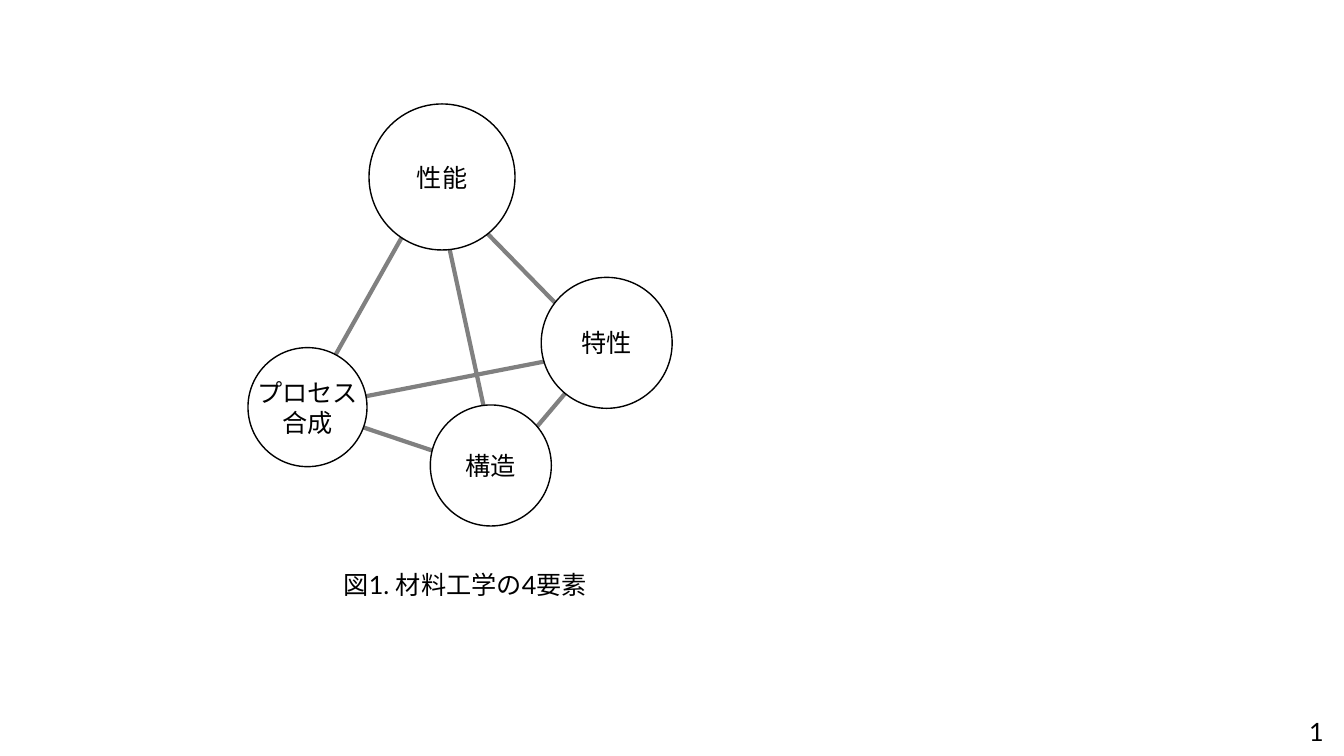
"""Build the slide on the four elements of materials engineering."""
from dataclasses import dataclass
from itertools import combinations

from lxml import etree
from pptx import Presentation
from pptx.dml.color import RGBColor
from pptx.enum import shapes, text
from pptx.oxml import ns
from pptx.util import Cm, Pt


@dataclass(frozen=True)
class Theme:
    ink: RGBColor = RGBColor(0, 0, 0)
    paper: RGBColor = RGBColor(255, 255, 255)
    link: RGBColor = RGBColor(128, 128, 128)
    size: Pt = Pt(18)
    outline: Pt = Pt(1)
    link_width: Pt = Pt(3)
    label_font: str = "Arial"
    body_font: str = "Lato"


@dataclass(frozen=True)
class Element:
    lines: tuple
    center: tuple
    diameter: float
    joint: tuple


THEME = Theme()
ELEMENTS = [
    Element(("性能",), (11.14, 4.46), 3.68, (10.95, 4.52)),
    Element(("特性",), (15.29, 8.64), 3.3, (15.16, 8.83)),
    Element(("構造",), (12.37, 11.73), 3.05, (12.55, 11.91)),
    Element(("プロセス", "合成"), (7.75, 10.26), 3.0, (7.7, 10.28)),
]


def write(tf, lines, font, align):
    """Write each line as a paragraph of one formatted run."""
    for i, line in enumerate(lines):
        p = tf.add_paragraph() if i else tf.paragraphs[0]
        p.alignment = align
        r = p.add_run()
        r.text = line
        r.font.name = font
        r.font.size = THEME.size
        r.font.color.rgb = THEME.ink


def add_link(s, start, end):
    """Draw a grey line between the joints of two elements."""
    c = s.shapes.add_connector(shapes.MSO_CONNECTOR.STRAIGHT,
                               *map(Cm, start.joint + end.joint))
    c.line.color.rgb = THEME.link
    c.line.width = THEME.link_width
    etree.SubElement(c._element.spPr, ns.qn("a:effectLst"))


def add_circle(s, element):
    """Draw an element as a circle with its name in the middle."""
    d = element.diameter
    x, y = (v - d / 2 for v in element.center)
    sp = s.shapes.add_shape(shapes.MSO_SHAPE.OVAL, Cm(x), Cm(y), Cm(d), Cm(d))
    sp.shadow.inherit = False
    sp.fill.solid()
    sp.fill.fore_color.rgb = THEME.paper
    sp.line.color.rgb = THEME.ink
    sp.line.width = THEME.outline
    tf = sp.text_frame
    tf.word_wrap = False
    tf.vertical_anchor = text.MSO_ANCHOR.MIDDLE
    write(tf, element.lines, THEME.label_font, text.PP_ALIGN.CENTER)


def add_text(s, box, line, align, anchor):
    """Add a wrapped text box with one line of body text."""
    tf = s.shapes.add_textbox(*map(Cm, box)).text_frame
    tf.word_wrap = True
    tf.vertical_anchor = anchor
    write(tf, [line], THEME.body_font, align)


def main():
    """Build and save the presentation."""
    prs = Presentation()
    prs.slide_width, prs.slide_height = Cm(33.87), Cm(19.05)
    s = prs.slides.add_slide(prs.slide_layouts[6])
    add_text(s, (31.22, 17.91, 2.39, 1.02), "1",
             text.PP_ALIGN.RIGHT, text.MSO_ANCHOR.MIDDLE)
    for start, end in combinations(ELEMENTS, 2):
        add_link(s, start, end)
    for element in ELEMENTS:
        add_circle(s, element)
    add_text(s, (8.41, 14.22, 6.73, 1.02), "図1. 材料工学の4要素",
             text.PP_ALIGN.LEFT, text.MSO_ANCHOR.TOP)
    prs.save("out.pptx")


if __name__ == "__main__":
    main()
